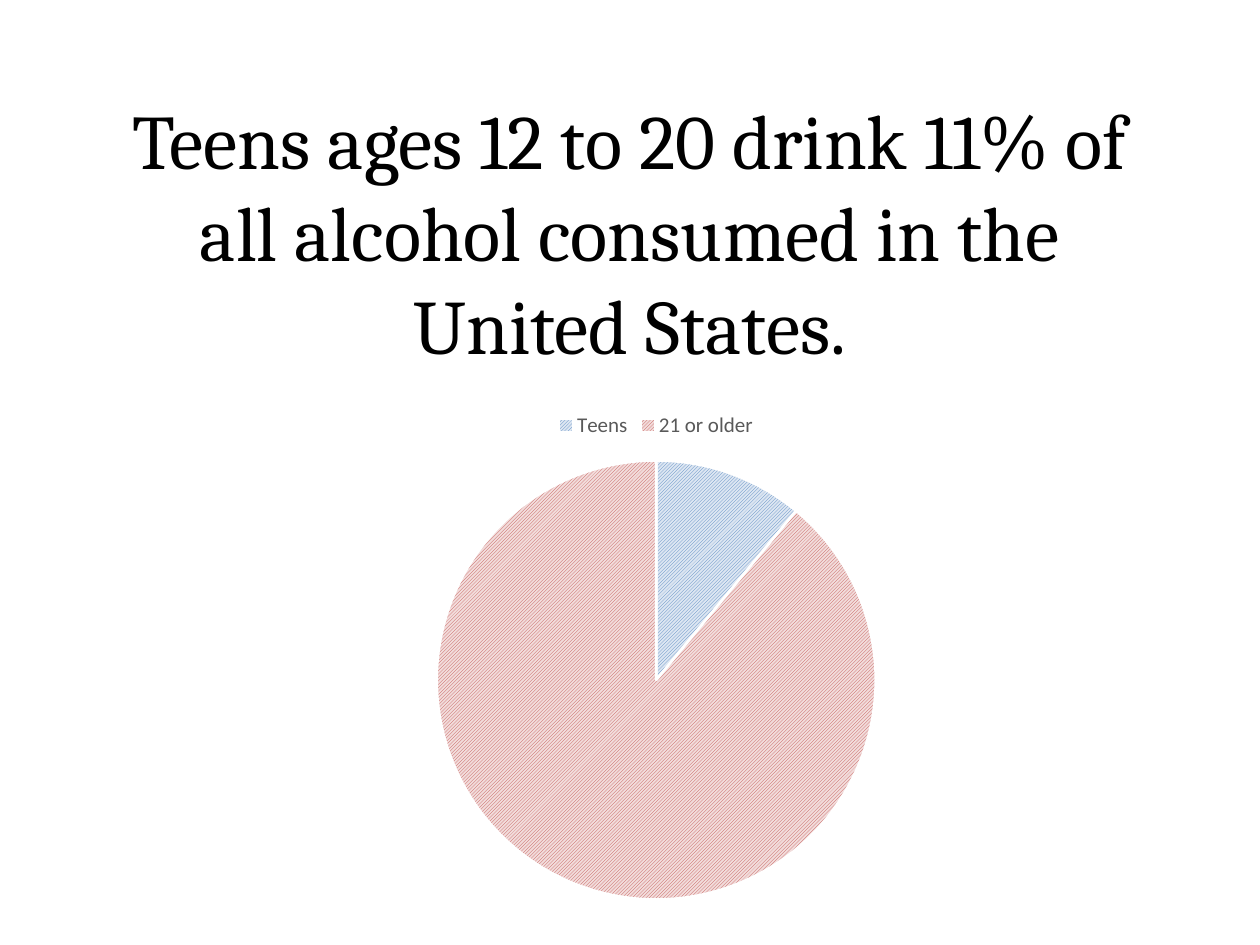
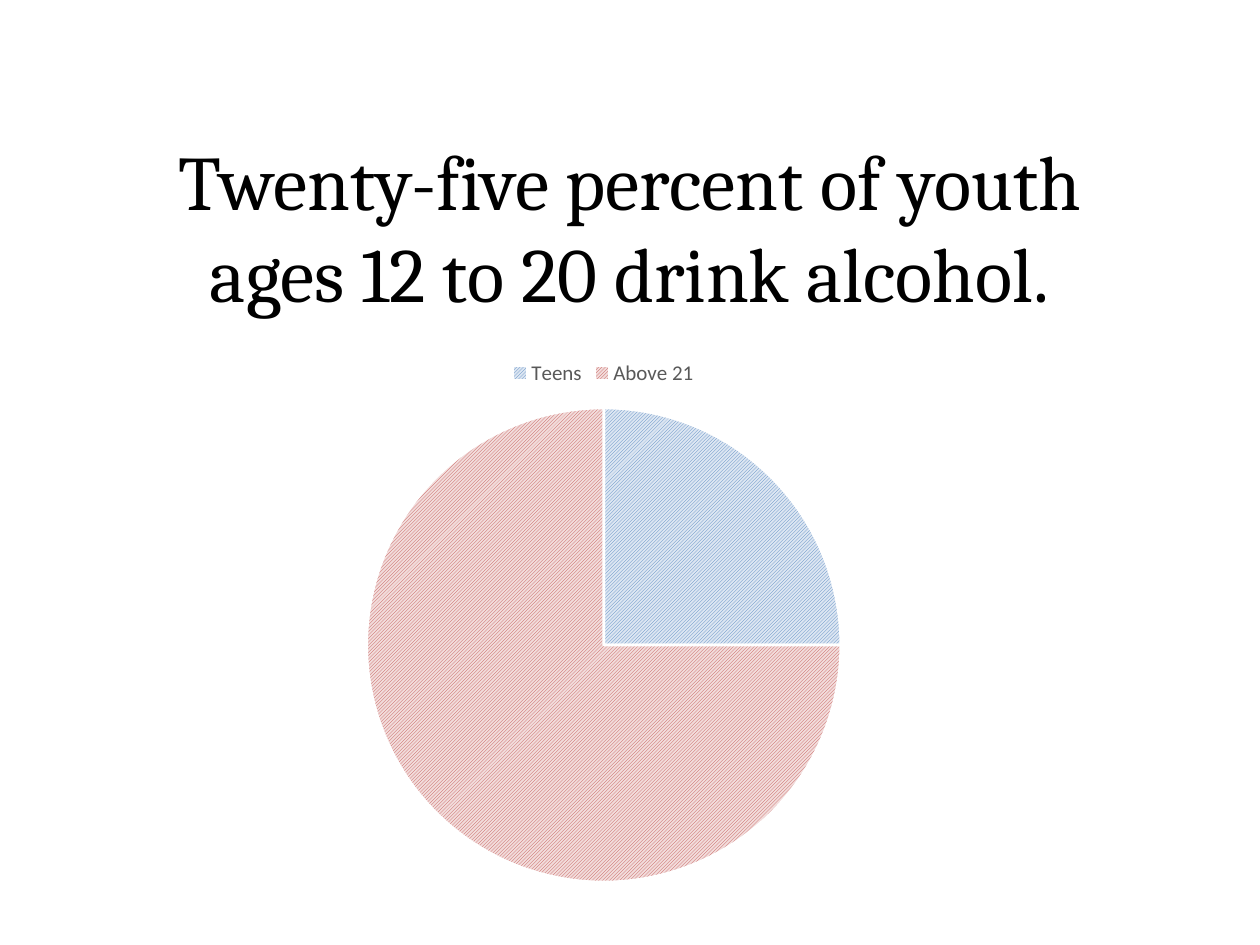
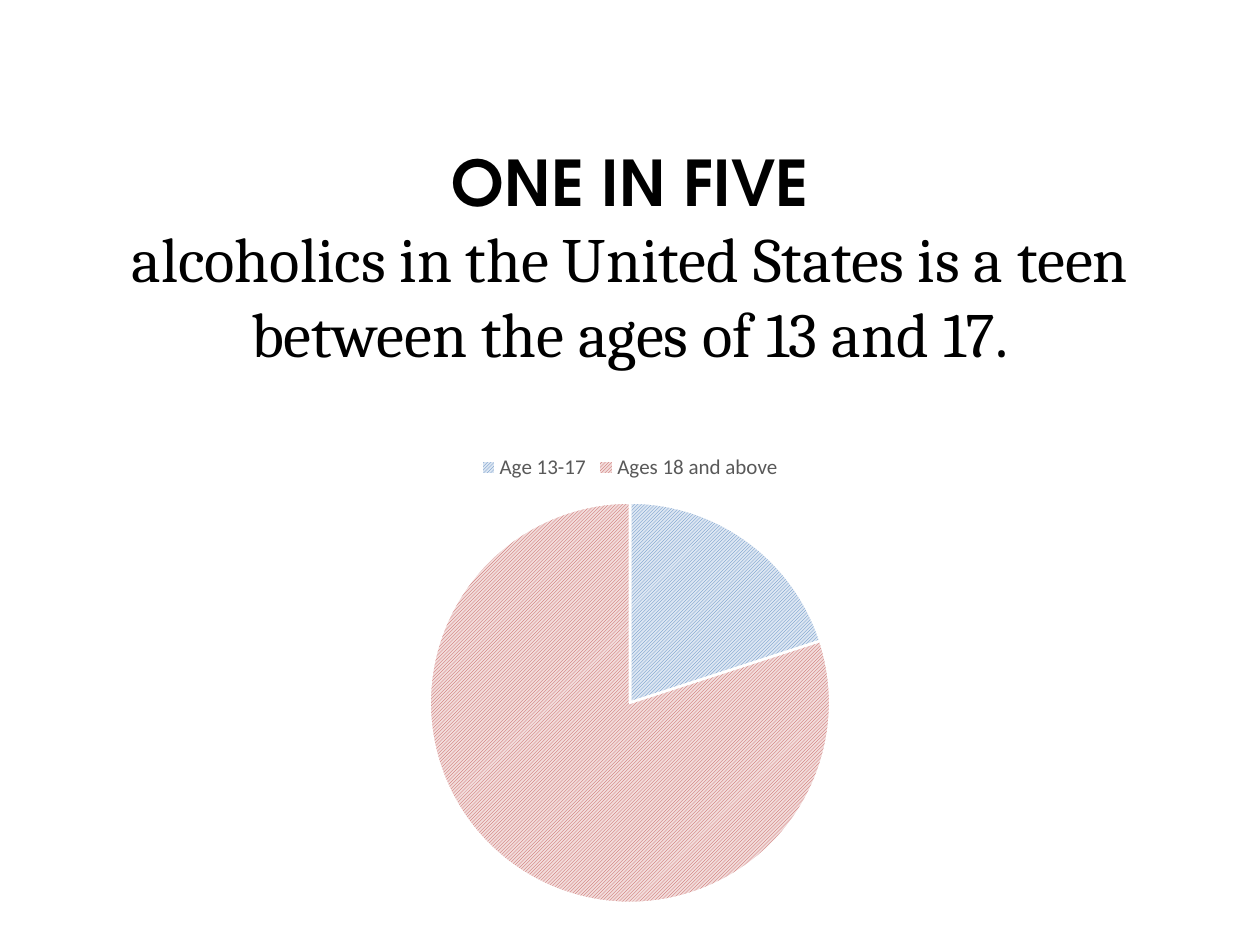
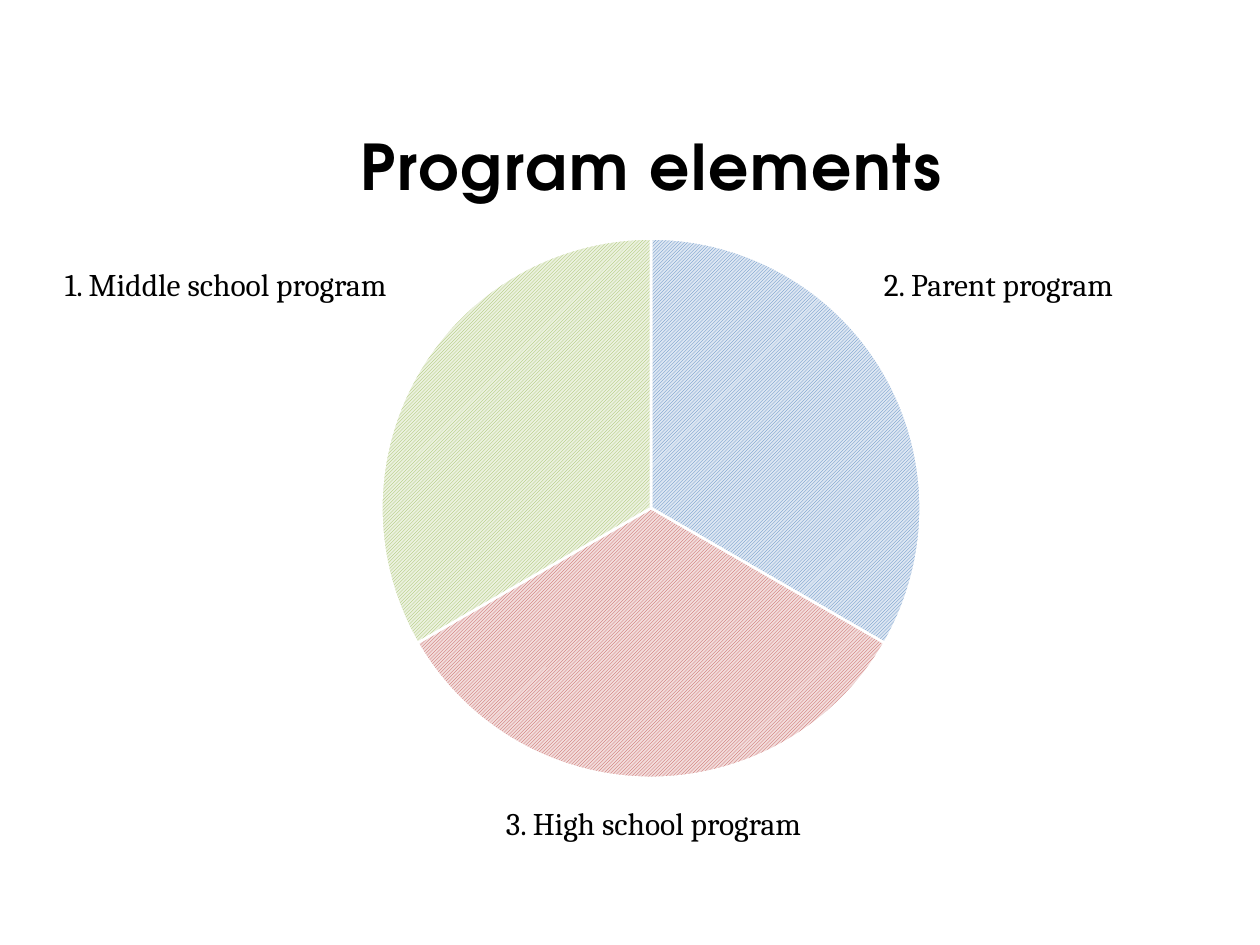
from dataclasses import dataclass

from pptx import Presentation
from pptx import util as u
from pptx.chart.data import CategoryChartData
from pptx.dml.color import RGBColor
from pptx.enum import chart as ch, dml, text

# Shared style
SERIF, DISPLAY, CHART_FONT = "Cambria", "TeX Gyre Adventor", "Calibri"
BLACK, WHITE, LEGEND_GREY = "000000", "FFFFFF", "595959"
SLICE_COLOURS = [("4F81BD", "DCE6F2"), ("C0504D", "F2DCDB"), ("9BBB59", "EBF1DE")]


@dataclass
class Box:
    """Position and size in points."""
    left: float
    top: float
    width: float
    height: float

    def lengths(self) -> list:
        return [u.Pt(v) for v in (self.left, self.top, self.width, self.height)]


@dataclass
class Line:
    """One paragraph and its style."""
    words: str
    size: float = 44
    face: str = SERIF
    bold: bool = False


@dataclass
class Pie:
    box: Box
    shares: dict[str, float]
    heading: str = ""


@dataclass
class Statement:
    """A slide with a large statement above a pie."""
    box: Box
    lines: list[Line]
    pie: Pie
    bottom_inset: float = 3.6


def colour(hex_code: str) -> RGBColor:
    return RGBColor.from_string(hex_code)


def style_font(font, face: str, size: float, hex_code: str, bold: bool = False) -> None:
    font.name, font.size, font.bold = face, u.Pt(size), bold
    font.color.rgb = colour(hex_code)


def add_lines(slide, box: Box, lines: list[Line], wrap: bool = True):
    frame = slide.shapes.add_textbox(*box.lengths()).text_frame
    frame.word_wrap = wrap
    frame.text = "\n".join(line.words for line in lines)
    for paragraph, line in zip(frame.paragraphs, lines):
        style_font(paragraph.runs[0].font, line.face, line.size, BLACK, line.bold)
    return frame


def add_pie(slide, pie: Pie) -> None:
    data = CategoryChartData()
    data.categories = list(pie.shares)
    data.add_series("Series 1", list(pie.shares.values()))
    chart = slide.shapes.add_chart(ch.XL_CHART_TYPE.PIE, *pie.box.lengths(), data).chart
    style_font(chart.font, CHART_FONT, 10, BLACK)

    # A pie has either a heading or a legend
    chart.has_title = bool(pie.heading)
    chart.has_legend = not pie.heading
    if pie.heading:
        heading = chart.chart_title.text_frame
        heading.text = pie.heading
        run = heading.paragraphs[0].runs[0]
        style_font(run.font, DISPLAY, 36, BLACK, True)
        run._r.get_or_add_rPr().set("spc", "100")
    else:
        chart.legend.position = ch.XL_LEGEND_POSITION.TOP
        chart.legend.include_in_layout = False
        style_font(chart.legend.font, CHART_FONT, 12, LEGEND_GREY)

    # Hatched slices with white edges
    plot = chart.plots[0]
    plot.vary_by_categories = True
    for index, (hatch, ground) in enumerate(SLICE_COLOURS[:len(pie.shares)]):
        part = plot.series[0].points[index].format
        part.fill.patterned()
        part.fill.pattern = dml.MSO_PATTERN.LIGHT_UPWARD_DIAGONAL
        part.fill.fore_color.rgb = colour(hatch)
        part.fill.back_color.rgb = colour(ground)
        part.line.color.rgb = colour(WHITE)
        part.line.width = u.Pt(1.5)


def add_statement(slide, statement: Statement) -> None:
    frame = add_lines(slide, statement.box, statement.lines)
    frame.vertical_anchor = text.MSO_ANCHOR.MIDDLE
    frame.margin_bottom = u.Pt(statement.bottom_inset)
    for paragraph in frame.paragraphs:
        paragraph.alignment = text.PP_ALIGN.CENTER
    add_pie(slide, statement.pie)


STATEMENTS = [
    Statement(
        Box(42, 36, 636, 192),
        [Line("Teens ages 12 to 20 drink 11% of all alcohol consumed in the United States.")],
        Pie(Box(150, 228, 450, 296), {"Teens": 11, "21 or older": 89}),
    ),
    Statement(
        Box(54, 18, 612, 222),
        [Line("Twenty-five percent of youth ages 12 to 20 drink alcohol.")],
        Pie(Box(108, 198, 474, 316), {"Teens": 25, "Above 21": 75}),
    ),
    Statement(
        Box(54, 90, 612, 156),
        [Line("ONE IN FIVE", 36, DISPLAY, True),
         Line("alcoholics in the United States is a teen between the ages of 13 and 17.", 36)],
        Pie(Box(154.5, 252, 411, 274), {"Age 13-17": 20, "Ages 18 and above": 80}),
        bottom_inset=46,
    ),
]

PROGRAM_PIE = Pie(Box(107, 60, 530, 394.5), {"1": 33, "2": 33, "3": 33}, "Program elements")
PROGRAM_LABELS = [
    ("1. Middle school program", Box(30, 147.6, 212, 29)),
    ("2. Parent program", Box(498, 147.6, 155, 29)),
    ("3. High school program", Box(282, 456, 194, 29)),
]


def main() -> None:
    deck = Presentation()
    deck.slide_width, deck.slide_height = u.Pt(720), u.Pt(540)
    blank = deck.slide_layouts[6]

    for statement in STATEMENTS:
        add_statement(deck.slides.add_slide(blank), statement)

    # Program elements around their pie
    program = deck.slides.add_slide(blank)
    add_pie(program, PROGRAM_PIE)
    for words, box in PROGRAM_LABELS:
        add_lines(program, box, [Line(words, 18)], wrap=False)

    deck.save("out.pptx")


if __name__ == "__main__":
    main()
